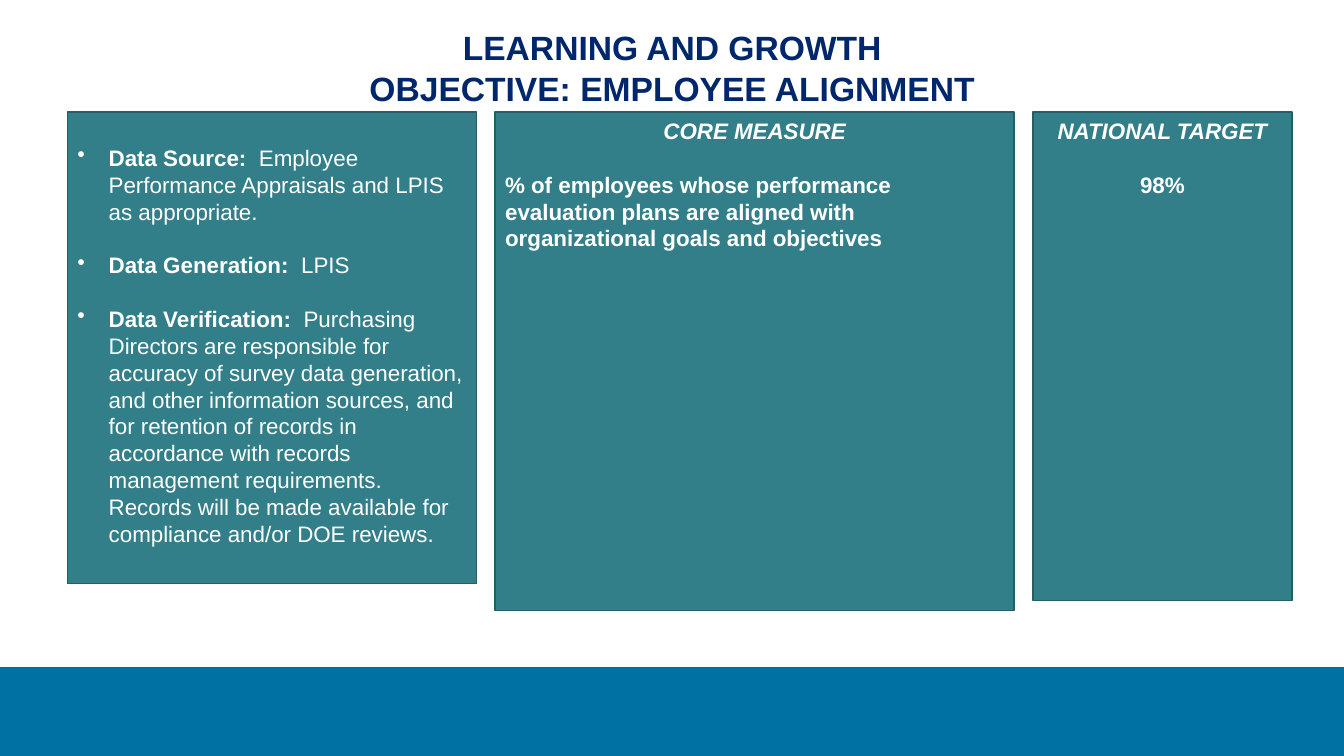
from pptx import Presentation
from pptx.dml.color import RGBColor
from pptx.enum.shapes import MSO_SHAPE
from pptx.enum.text import MSO_ANCHOR, PP_ALIGN
from pptx.oxml.ns import qn
from pptx.util import Cm, Pt

RECTANGLE = MSO_SHAPE.RECTANGLE
TOP = MSO_ANCHOR.TOP
LEFT, CENTER = PP_ALIGN.LEFT, PP_ALIGN.CENTER

COLORS = {
    "band": "0071A3",
    "title": "00266C",
    "panel": "337F89",
    "border": "265E65",
    "text": "FFFFFF",
}
PAGE_WIDTH, PAGE_HEIGHT = Cm(33.87), Cm(19.05)
BAND_HEIGHT = Cm(2.24)
PANEL_LEFT, PANEL_TOP, PANEL_GAP = Cm(1.7), Cm(2.82), Cm(0.47)
BODY_SIZE, TITLE_SIZE = 16, 24
LINE_FACTOR = 1.2
BODY_LINE = Pt(BODY_SIZE * LINE_FACTOR)
INSET = Cm(0.13)
BULLET_INDENT = Cm(0.79)

TITLE_LINES = ["LEARNING AND GROWTH", "OBJECTIVE: EMPLOYEE ALIGNMENT"]
DATA_NOTES = [
    ("Data Source:  ", "Employee Performance Appraisals and LPIS as appropriate."),
    ("Data Generation:  ", "LPIS"),
    (
        "Data Verification:  ",
        "Purchasing Directors are responsible for accuracy of survey data "
        "generation, and other information sources, and for retention of records "
        "in accordance with records management requirements.  Records will be "
        "made available for compliance and/or DOE reviews.",
    ),
]
MEASURE_LINES = [
    "% of employees whose performance",
    "evaluation plans are aligned with",
    "organizational goals and objectives",
]


def color(name):
    return RGBColor.from_string(COLORS[name])


def add_rectangle(page, box, fill, border=None):
    shape = page.shapes.add_shape(RECTANGLE, *box)
    shape.shadow.inherit = False
    shape.fill.solid()
    shape.fill.fore_color.rgb = color(fill)
    if border:
        shape.line.color.rgb = color(border)
        shape.line.width = Pt(1)
    else:
        shape.line.fill.background()
    return shape


def set_bullet(para):
    properties = para._p.get_or_add_pPr()
    properties.set("marL", str(BULLET_INDENT))
    properties.set("indent", str(-BULLET_INDENT))
    bullet = properties.makeelement(qn("a:buChar"), {"char": "•"})
    properties.append(bullet)


def add_para(frame, spans, size=BODY_SIZE, ink="text", align=LEFT, gap=0, bullet=False):
    """Write one paragraph of (text, font format) spans, reusing an empty first one."""
    para = frame.paragraphs[0]
    if para.runs:
        para = frame.add_paragraph()
    para_format = {
        "alignment": align,
        "space_before": gap,
        "line_spacing": Pt(size * LINE_FACTOR),
    }
    for name, value in para_format.items():
        setattr(para, name, value)
    if bullet:
        set_bullet(para)
    for text, changes in spans:
        span = para.add_run()
        span.text = text
        font_format = {"name": "Arial", "size": Pt(size), "bold": True, **changes}
        for name, value in font_format.items():
            setattr(span.font, name, value)
        span.font.color.rgb = color(ink)


def prepare_frame(shape, top_inset=INSET):
    frame = shape.text_frame
    frame_format = {
        "word_wrap": True,
        "vertical_anchor": TOP,
        "margin_top": top_inset,
        "margin_bottom": INSET,
    }
    for name, value in frame_format.items():
        setattr(frame, name, value)
    return frame


def add_title(page, box):
    frame = prepare_frame(page.shapes.add_textbox(*box))
    for line in TITLE_LINES:
        add_para(frame, [(line, {})], TITLE_SIZE, "title", CENTER)


def add_notes_panel(page, box):
    panel = add_rectangle(page, box, "panel", "border")
    frame = prepare_frame(panel, INSET + BODY_LINE)
    for index, (label, detail) in enumerate(DATA_NOTES):
        spans = [(label, {}), (detail, {"bold": False})]
        add_para(frame, spans, gap=BODY_LINE if index else 0, bullet=True)


def add_headed_panel(page, box, heading, lines, align):
    frame = prepare_frame(add_rectangle(page, box, "panel", "border"))
    add_para(frame, [(heading, {"italic": True})], align=CENTER)
    for index, line in enumerate(lines):
        add_para(frame, [(line, {})], align=align, gap=0 if index else BODY_LINE)


def main():
    deck = Presentation()
    deck.slide_width, deck.slide_height = PAGE_WIDTH, PAGE_HEIGHT
    page = deck.slides.add_slide(deck.slide_layouts[6])

    band = (0, PAGE_HEIGHT - BAND_HEIGHT, PAGE_WIDTH, BAND_HEIGHT)
    add_rectangle(page, band, "band")
    add_title(page, (Cm(5.84), Cm(0.56), Cm(22.2), Cm(2.31)))

    sizes = [(Cm(10.31), Cm(11.89)), (Cm(13.08), Cm(12.57)), (Cm(6.53), Cm(12.32))]
    boxes = []
    left = PANEL_LEFT
    for width, height in sizes:
        boxes.append((left, PANEL_TOP, width, height))
        left += width + PANEL_GAP
    notes_box, measure_box, target_box = boxes
    add_notes_panel(page, notes_box)
    add_headed_panel(page, measure_box, "CORE MEASURE", MEASURE_LINES, LEFT)
    add_headed_panel(page, target_box, "NATIONAL TARGET", ["98%"], CENTER)

    deck.save("out.pptx")


if __name__ == "__main__":
    main()
